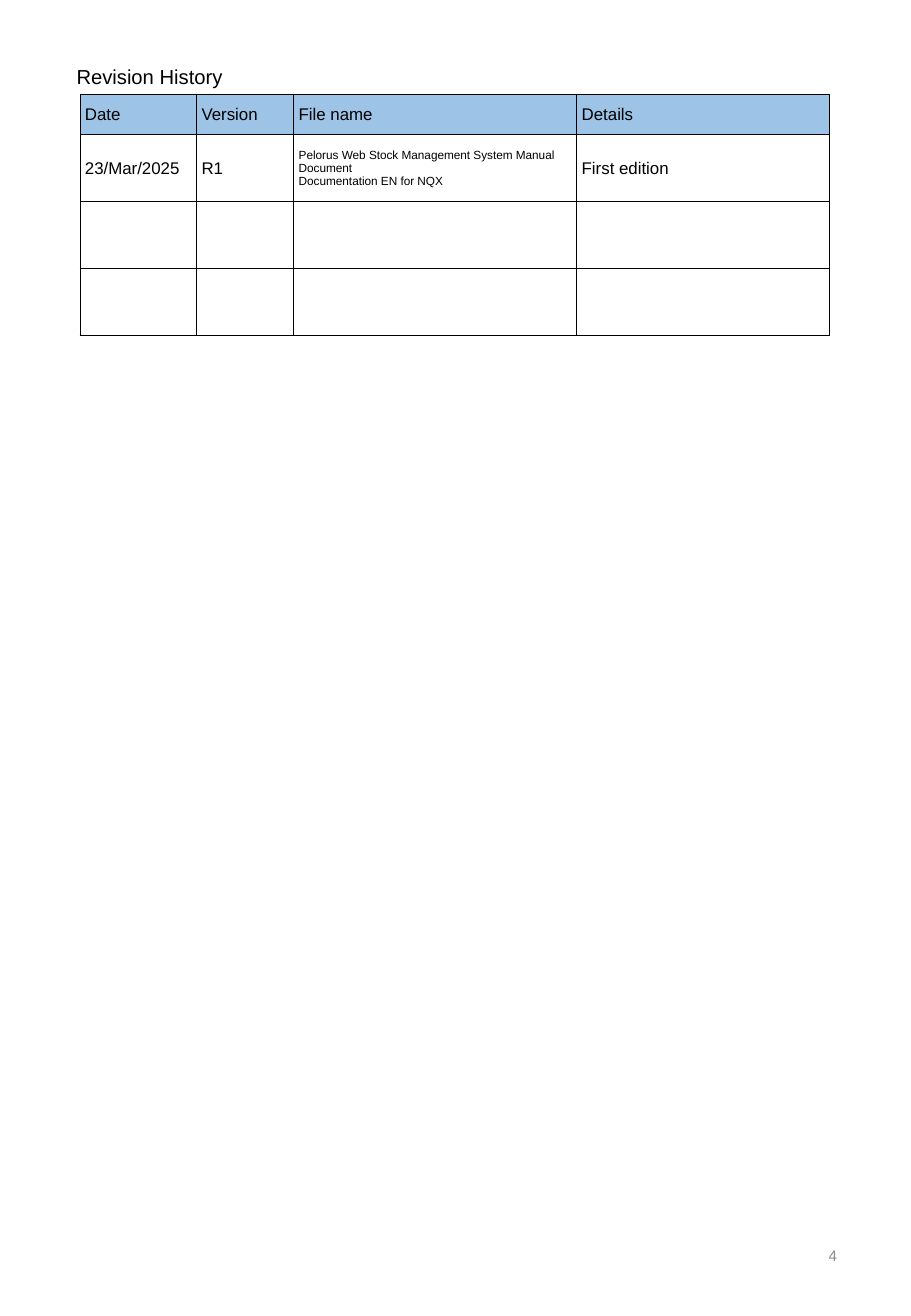
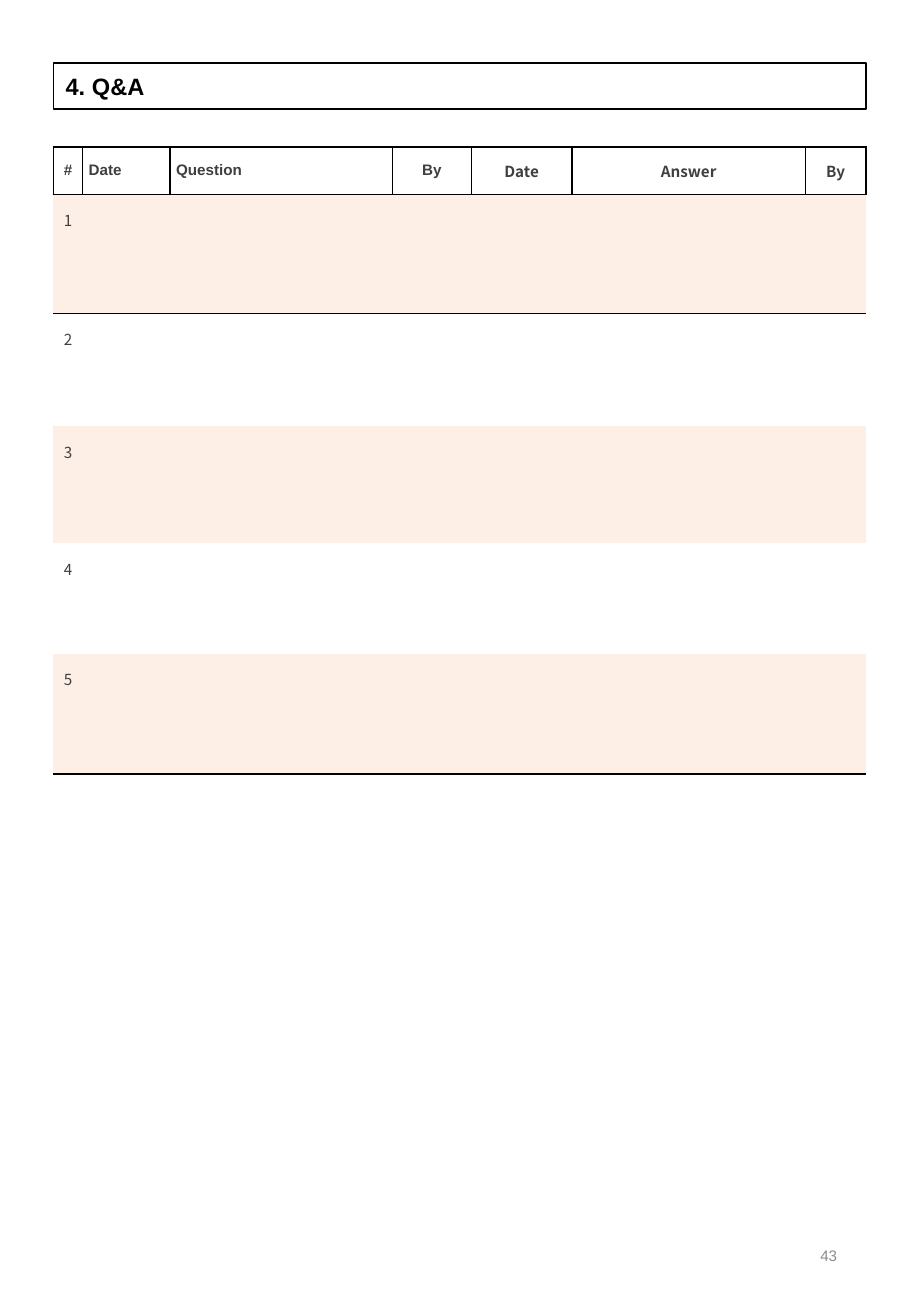
from dataclasses import dataclass

import lxml.etree
import pptx
import pptx.dml.color
import pptx.enum.text
import pptx.oxml.ns
import pptx.presentation
import pptx.shapes.autoshape
import pptx.slide
import pptx.table
import pptx.text.text
import pptx.util

Inches = pptx.util.Inches
Align = pptx.enum.text.PP_ALIGN
Anchor = pptx.enum.text.MSO_ANCHOR
qn = pptx.oxml.ns.qn

SANS = "Arial"
NOTO = "Noto Sans CJK JP"
BLACK = "000000"
DARK_GRAY = "3F3F3F"
PAGE_GRAY = "8C8C8C"
HEADER_BLUE = "9DC3E6"
BAND_PEACH = "FDEFE6"
NO_STYLE = "{2D5ABB26-0587-4C30-8999-92F81FD0307C}"
TITLE_ONLY = 5


@dataclass(frozen=True)
class Box:
    left: float
    top: float
    width: float
    height: float


@dataclass(frozen=True)
class TextStyle:
    size: float
    color: str = BLACK
    font: str = SANS
    bold: bool = False
    align: Align = Align.LEFT


@dataclass(frozen=True)
class CellStyle:
    text: TextStyle
    insets: tuple[float, float, float, float]  # left, top, right, bottom
    fill: str | None = None
    anchor: Anchor = Anchor.MIDDLE
    edges: str = ""
    line_width: float = 1


@dataclass(frozen=True)
class HeaderCell:
    label: str
    width: float
    align: Align = Align.CENTER
    font: str = SANS
    left_inset: float = 0.01


PAGE_NUMBER_BOX = Box(5.3, 10.04, 1.69, 0.58)
PAGE_NUMBER_STYLE = TextStyle(9, PAGE_GRAY, align=Align.RIGHT)

REVISION_WIDTHS = [0.96, 0.8, 2.33, 2.08]
REVISION_HEIGHTS = [0.33, 0.55, 0.55, 0.55]
REVISION_INSETS = (0.04, 0.05, 0.1, 0.05)
REVISION_ROWS = [
    ["Date", "Version", "File name", "Details"],
    ["23/Mar/2025", "R1",
     "Pelorus Web Stock Management System Manual Document\nDocumentation EN for NQX",
     "First edition"],
    [""] * 4,
    [""] * 4,
]
FILE_NAME_COLUMN = 2

QA_HEADERS = [
    HeaderCell("#", 0.24),
    HeaderCell("Date", 0.72, Align.LEFT, left_inset=0.05),
    HeaderCell("Question", 1.83, Align.LEFT, left_inset=0.05),
    HeaderCell("By", 0.65),
    HeaderCell("Date", 0.83, font=NOTO),
    HeaderCell("Answer", 1.92, font=NOTO),
    HeaderCell("By", 0.5, font=NOTO),
]
QA_HEIGHTS = [0.39, 0.98, 0.93, 0.96, 0.91, 0.99]


def rgb(color: str) -> pptx.dml.color.RGBColor:
    return pptx.dml.color.RGBColor.from_string(color)


def lengths(box: Box) -> list[pptx.util.Length]:
    return [Inches(value) for value in (box.left, box.top, box.width, box.height)]


def write_text(frame: pptx.text.text.TextFrame, text: str, style: TextStyle) -> None:
    frame.text = text
    for paragraph in frame.paragraphs:
        paragraph.alignment = style.align
        paragraph.font.name = style.font
        paragraph.font.size = pptx.util.Pt(style.size)
        paragraph.font.bold = style.bold
        paragraph.font.color.rgb = rgb(style.color)


def add_page(presentation: pptx.presentation.Presentation, title: str, box: Box,
             style: TextStyle, number: int) -> pptx.slide.Slide:
    slide = presentation.slides.add_slide(presentation.slide_layouts[TITLE_ONLY])
    shape = slide.shapes.title
    shape.left, shape.top, shape.width, shape.height = lengths(box)
    shape.text_frame.vertical_anchor = Anchor.MIDDLE
    shape.text_frame.auto_size = pptx.enum.text.MSO_AUTO_SIZE.NONE
    write_text(shape.text_frame, title, style)

    # Page number
    footer = slide.shapes.add_textbox(*lengths(PAGE_NUMBER_BOX)).text_frame
    footer.word_wrap = True
    footer.vertical_anchor = Anchor.MIDDLE
    write_text(footer, str(number), PAGE_NUMBER_STYLE)
    return slide


def add_plain_table(slide: pptx.slide.Slide, left: float, top: float,
                    widths: list[float], heights: list[float]) -> pptx.table.Table:
    box = Box(left, top, sum(widths), sum(heights))
    table = slide.shapes.add_table(len(heights), len(widths), *lengths(box)).table
    table.first_row = table.horz_banding = False
    table._tbl.tblPr.find(qn("a:tableStyleId")).text = NO_STYLE
    for column, width in zip(table.columns, widths):
        column.width = Inches(width)
    for row, height in zip(table.rows, heights):
        row.height = Inches(height)
    return table


def format_cell(cell: pptx.table._Cell, text: str, style: CellStyle) -> None:
    insets = [Inches(value) for value in style.insets]
    cell.margin_left, cell.margin_top, cell.margin_right, cell.margin_bottom = insets
    cell.vertical_anchor = style.anchor
    if text:
        write_text(cell.text_frame, text, style.text)

    # Borders come before the fill in the cell properties
    properties = cell._tc.get_or_add_tcPr()
    for edge in style.edges:
        line = lxml.etree.SubElement(properties, qn(f"a:ln{edge}"),
                                     w=str(pptx.util.Pt(style.line_width)))
        solid = lxml.etree.SubElement(line, qn("a:solidFill"))
        lxml.etree.SubElement(solid, qn("a:srgbClr"), val=BLACK)
    if style.fill:
        cell.fill.solid()
        cell.fill.fore_color.rgb = rgb(style.fill)
    else:
        cell.fill.background()


def add_revision_page(presentation: pptx.presentation.Presentation) -> None:
    slide = add_page(presentation, "Revision History", Box(0.47, 0.48, 1.56, 0.3),
                     TextStyle(12), 4)
    slide.shapes.title.text_frame.margin_left = Inches(0.16)
    table = add_plain_table(slide, 0.66, 0.78, REVISION_WIDTHS, REVISION_HEIGHTS)
    for row, texts in enumerate(REVISION_ROWS):
        for column, text in enumerate(texts):
            size = 7 if row and column == FILE_NAME_COLUMN else 10
            format_cell(table.cell(row, column), text, CellStyle(
                TextStyle(size), REVISION_INSETS, None if row else HEADER_BLUE,
                edges="LRTB", line_width=0.75))


def add_qa_page(presentation: pptx.presentation.Presentation) -> None:
    slide = add_page(presentation, "4. Q&A", Box(0.44, 0.52, 6.69, 0.38),
                     TextStyle(14, bold=True), 43)
    slide.shapes.title.line.color.rgb = rgb(BLACK)
    slide.shapes.title.line.width = pptx.util.Pt(1)
    table = add_plain_table(slide, 0.44, 1.21,
                            [header.width for header in QA_HEADERS], QA_HEIGHTS)

    # Header row
    for column, header in enumerate(QA_HEADERS):
        format_cell(table.cell(0, column), header.label, CellStyle(
            TextStyle(9, DARK_GRAY, header.font, True, header.align),
            (header.left_inset, 0.01, 0.01, 0.01), edges="LRTB"))

    # Numbered rows, every other one shaded
    last_row = len(QA_HEIGHTS) - 1
    number_style = TextStyle(9, DARK_GRAY, NOTO, align=Align.CENTER)
    for row in range(1, last_row + 1):
        edges = "T" if row == 1 else "B" if row == last_row else ""
        style = CellStyle(number_style, (0.01, 0.12, 0.01, 0.01),
                          BAND_PEACH if row % 2 else None, Anchor.TOP, edges)
        for column in range(len(QA_HEADERS)):
            format_cell(table.cell(row, column), "" if column else str(row), style)


def main() -> None:
    presentation = pptx.Presentation()
    presentation.slide_width = Inches(7.5)
    presentation.slide_height = Inches(10.83)
    add_revision_page(presentation)
    add_qa_page(presentation)
    presentation.save("out.pptx")


if __name__ == "__main__":
    main()
